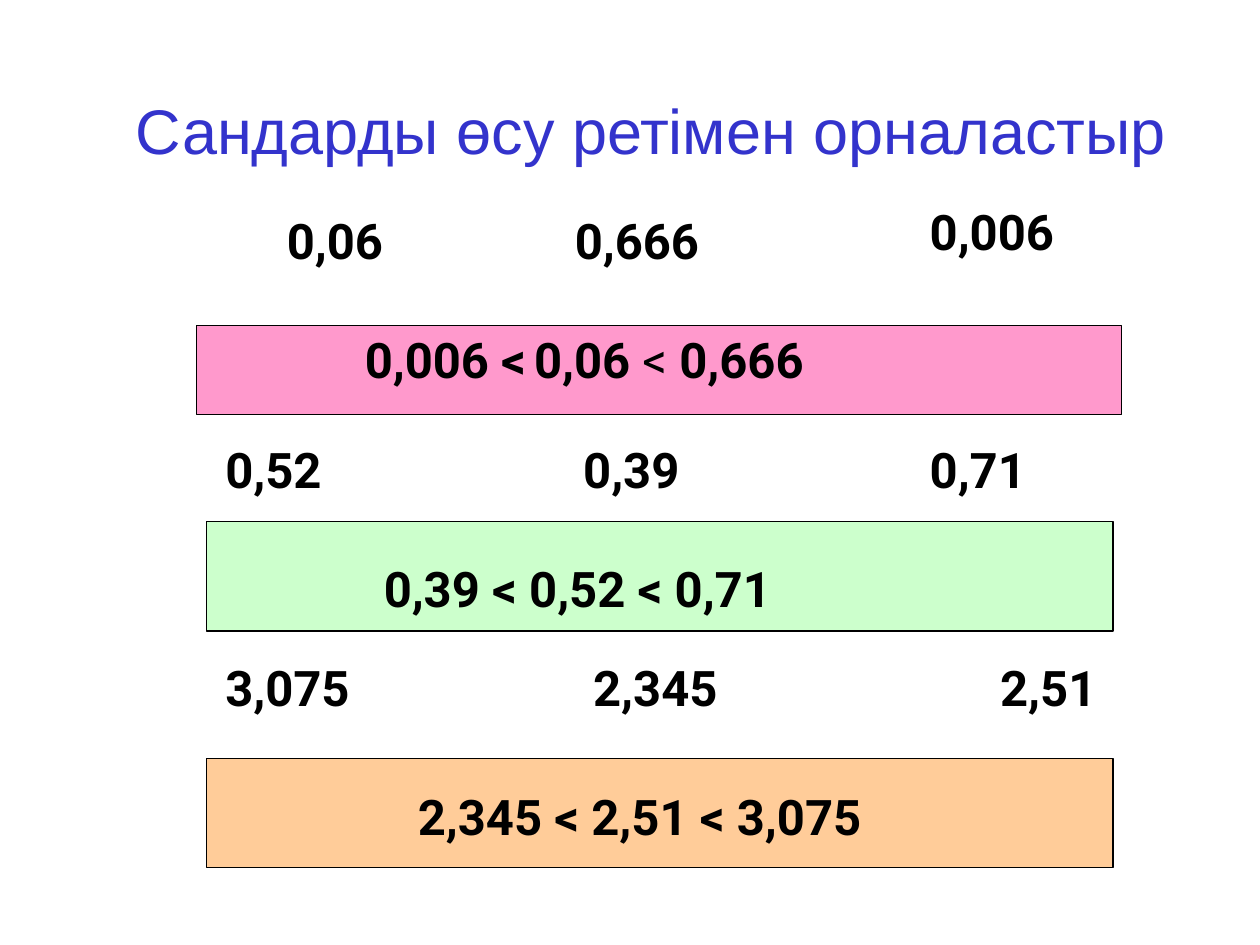
import pptx
import pptx.util
import pptx.dml.color
import pptx.enum.shapes

Pt = pptx.util.Pt

COLORS = {
    "title": "3333CC",
    "text": "000000",
    "line": "000000",
    "pink": "FF99CC",
    "green": "CCFFCC",
    "orange": "FFCC99",
}
TEXT_HEIGHT = 41

# Each box is left, top, width, height; offsets inside it are from its corner.
# Numbers are (x, y, text); answer runs are (text, size, bold).
EXERCISES = [
    {
        "box": (112.5, 111.6, 528.5, 125.2),
        "numbers": [(44.3, 5, "0,06"), (208.9, 5, "0,666"), (411.7, 0, "0,006")],
        "band": ("pink", 51),
        "answer": (88.9, 73.4, [("0,006 <", 28, True), (" ", 18, False),
                                ("0,06 ", 28, True), ("< ", 28, False),
                                ("0,666", 28, True)]),
    },
    {
        "box": (118, 247.7, 518, 112.9),
        "numbers": [(3.7, 0, "0,52"), (208.2, 0, "0,39"), (406.2, 0, "0,71")],
        "band": ("green", 62.5),
        "answer": (94.2, 67.7, [("0,39 < 0,52 < 0,71", 28, True)]),
    },
    {
        "box": (118, 372.2, 518, 123.6),
        "numbers": [(3.7, 0, "3,075"), (213.9, 0, "2,345"), (446.5, 0, "2,51")],
        "band": ("orange", 62.5),
        "answer": (113.7, 73.5, [("2,345 < 2,51 < 3,075", 28, True)]),
    },
]


def rgb(name):
    return pptx.dml.color.RGBColor.from_string(COLORS[name])


def add_text(slide, left, top, width, height, runs, font="Roboto", color="text"):
    shape = slide.shapes.add_textbox(Pt(left), Pt(top), Pt(width), Pt(height))
    shape.text_frame.word_wrap = True
    paragraph = shape.text_frame.paragraphs[0]
    for text, size, bold in runs:
        run = paragraph.add_run()
        run.text = text
        run.font.name = font
        run.font.size = Pt(size)
        run.font.bold = bold
        run.font.color.rgb = rgb(color)


def add_title(slide, left, top, width, height):
    add_text(slide, left, top, width, height,
             [("Сандарды өсу ретімен орналастыр", 36, False)], "Arial", "title")


def add_exercise(slide, box, numbers, band, answer):
    left, top, width, height = box

    # Numbers to put in order
    for x, y, text in numbers:
        add_text(slide, left + x, top + y, 100, TEXT_HEIGHT, [(text, 28, True)])

    # Coloured band along the bottom of the box
    color, band_height = band
    shape = slide.shapes.add_shape(
        pptx.enum.shapes.MSO_SHAPE.RECTANGLE,
        Pt(left), Pt(top + height - band_height), Pt(width), Pt(band_height))
    shape.shadow.inherit = False
    shape.fill.solid()
    shape.fill.fore_color.rgb = rgb(color)
    shape.line.color.rgb = rgb("line")
    shape.line.width = Pt(0.75)

    # Ordered answer over the band
    x, y, runs = answer
    add_text(slide, left + x, top + y, width - x, TEXT_HEIGHT, runs)


def main():
    presentation = pptx.Presentation()
    presentation.slide_width = Pt(720)
    presentation.slide_height = Pt(540)
    slide = presentation.slides.add_slide(presentation.slide_layouts[6])

    add_title(slide, 70.6, 49, 620, 50.4)
    for exercise in EXERCISES:
        add_exercise(slide, **exercise)

    presentation.save("out.pptx")


if __name__ == "__main__":
    main()
